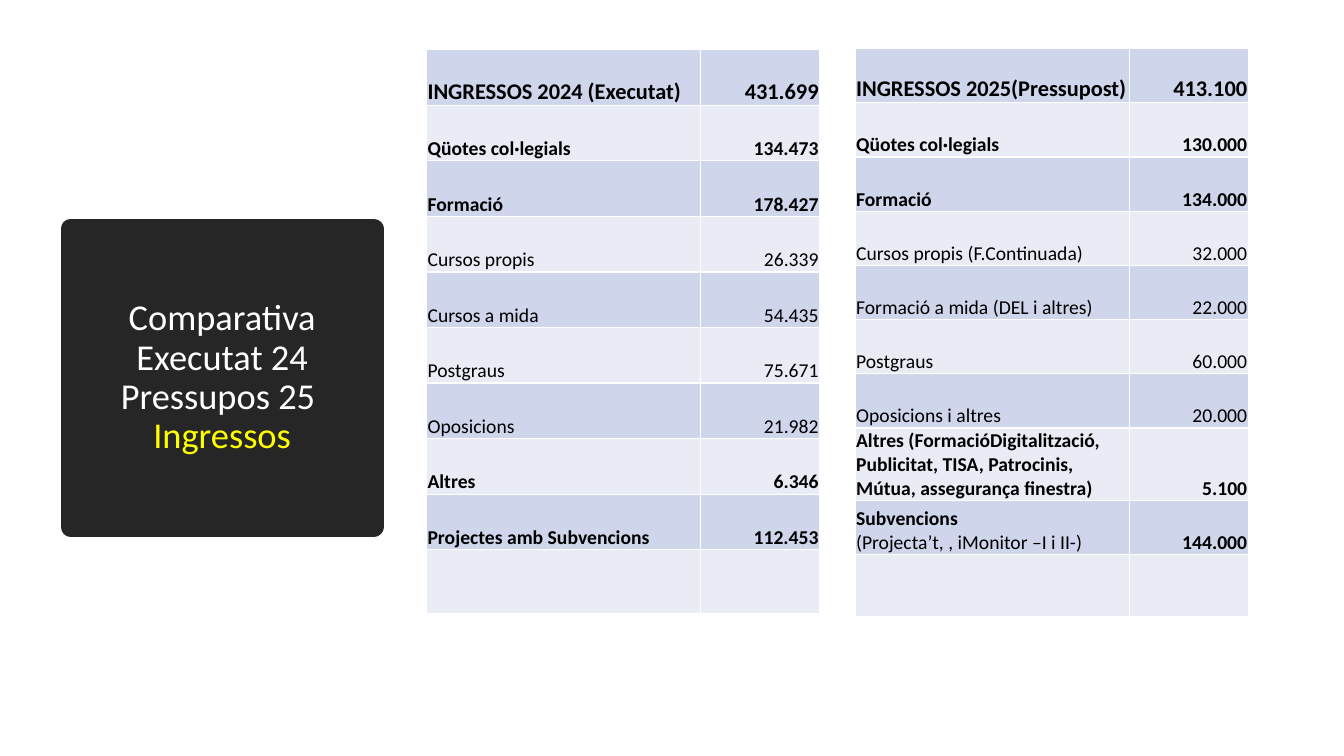
from lxml.etree import SubElement
from pptx import Presentation
from pptx.dml.color import RGBColor
from pptx.enum.shapes import MSO_SHAPE as Shape
from pptx.enum.text import MSO_ANCHOR as Anchor, PP_ALIGN as Align
from pptx.oxml.ns import qn
from pptx.util import Pt

# Content: each row is (label lines, amount); a line is (text, bold)
HEADING = [("Comparativa Executat 24 Pressupos 25 \v", "white"), ("Ingressos", "yellow")]
BUDGET_2025 = [
    ([("INGRESSOS 2025(Pressupost)", True)], (" 413.100", True)),
    ([("Qüotes col·legials", True)], ("130.000", True)),
    ([("Formació", True)], ("134.000", True)),
    ([("Cursos propis (F.Continuada)", False)], ("32.000", False)),
    ([("Formació a mida (DEL i altres)", False)], ("22.000", False)),
    ([("Postgraus", False)], ("60.000", False)),
    ([("Oposicions i altres", False)], ("20.000", False)),
    ([("Altres (FormacióDigitalització, Publicitat, TISA, Patrocinis, "
       "Mútua, assegurança finestra)", True)], ("5.100", True)),
    ([("Subvencions", True), ("(Projecta’t, , iMonitor –I i II-)", False)],
     ("144.000", True)),
]
EXECUTED_2024 = [
    ([("INGRESSOS 2024 (Executat)", True)], (" 431.699", True)),
    ([("Qüotes col·legials", True)], ("134.473", True)),
    ([("Formació", True)], ("178.427", True)),
    ([("Cursos propis", False)], ("26.339", False)),
    ([("Cursos a mida", False)], ("54.435", False)),
    ([("Postgraus", False)], ("75.671", False)),
    ([("Oposicions", False)], ("21.982", False)),
    ([("Altres", True)], ("6.346", True)),
    ([("Projectes amb Subvencions", True)], ("112.453", True)),
]

# Look
FONT = "Calibri"
BLACK = RGBColor(0x00, 0x00, 0x00)
CHARCOAL = RGBColor(0x26, 0x26, 0x26)
BANDS = RGBColor(0xCF, 0xD5, 0xEA), RGBColor(0xE9, 0xEB, 0xF5)
HEADING_COLORS = {"white": RGBColor(0xFF, 0xFF, 0xFF), "yellow": RGBColor(0xFF, 0xFF, 0x00)}
COLUMN_WIDTHS = 195.8, 85


def add_text(paragraph, text, size=14, color=BLACK, bold=False, align=Align.LEFT):
    paragraph.alignment = align
    words, *after_break = text.split("\v")
    run = paragraph.add_run()
    run.text = words
    run.font.name, run.font.size, run.font.bold = FONT, Pt(size), bold
    run.font.color.rgb = color
    if after_break:
        paragraph.add_line_break()


def style_cell(cell, fill):
    properties = cell._tc.get_or_add_tcPr()
    for side in ("a:lnL", "a:lnR", "a:lnT", "a:lnB"):
        border = SubElement(properties, qn(side), w=str(Pt(1)))
        SubElement(SubElement(border, qn("a:solidFill")), qn("a:srgbClr"), val="FFFFFF")
    cell.fill.solid()
    cell.fill.fore_color.rgb = fill


def fill_cell(cell, lines, size, align):
    cell.vertical_anchor = Anchor.BOTTOM
    cell.margin_left = cell.margin_right = cell.margin_top = Pt(0.72)
    cell.margin_bottom = 0
    for index, (text, bold) in enumerate(lines):
        frame = cell.text_frame
        paragraph = frame.add_paragraph() if index else frame.paragraphs[0]
        add_text(paragraph, text, size=size, bold=bold, align=align)


def add_income_table(slide, entries, left, top, heights):
    income = slide.shapes.add_table(len(heights), 2, Pt(left), Pt(top),
                                    Pt(sum(COLUMN_WIDTHS)), Pt(sum(heights))).table
    income.first_row = income.horz_banding = False
    for column, width in zip(income.columns, COLUMN_WIDTHS):
        column.width = Pt(width)
    for index, height in enumerate(heights):
        income.rows[index].height = Pt(height)
        for cell in income.rows[index].cells:
            style_cell(cell, BANDS[index % 2])
    for index, (label, amount) in enumerate(entries):
        size = 14 if index else 16
        fill_cell(income.cell(index, 0), label, size, Align.LEFT)
        fill_cell(income.cell(index, 1), [amount], size, Align.RIGHT)


def main():
    deck = Presentation()
    deck.slide_width, deck.slide_height = Pt(960), Pt(540)
    slide = deck.slides.add_slide(deck.slide_layouts[6])

    # Heading block, its corners rounded by the thick outline
    block = slide.shapes.add_shape(Shape.RECTANGLE, Pt(50.4), Pt(163.4), Pt(216.7), Pt(213.1))
    block.shadow.inherit = False
    block.fill.solid()
    block.fill.fore_color.rgb = block.line.color.rgb = CHARCOAL
    block.line.width = Pt(13.75)
    SubElement(block.line._get_or_add_ln(), qn("a:round"))
    frame = block.text_frame
    frame.word_wrap = True
    frame.vertical_anchor = Anchor.MIDDLE
    heading = frame.paragraphs[0]
    heading.line_spacing = 0.9
    for text, color in HEADING:
        add_text(heading, text, size=26, color=HEADING_COLORS[color], align=Align.CENTER)

    # Income tables, each closing with an empty row
    add_income_table(slide, BUDGET_2025, 610.8, 34.8, [38.7] * 7 + [49.7, 38.7, 44.3])
    add_income_table(slide, EXECUTED_2024, 304.7, 35.5, [39.7] * 9 + [45.8])

    deck.save("out.pptx")


if __name__ == "__main__":
    main()
